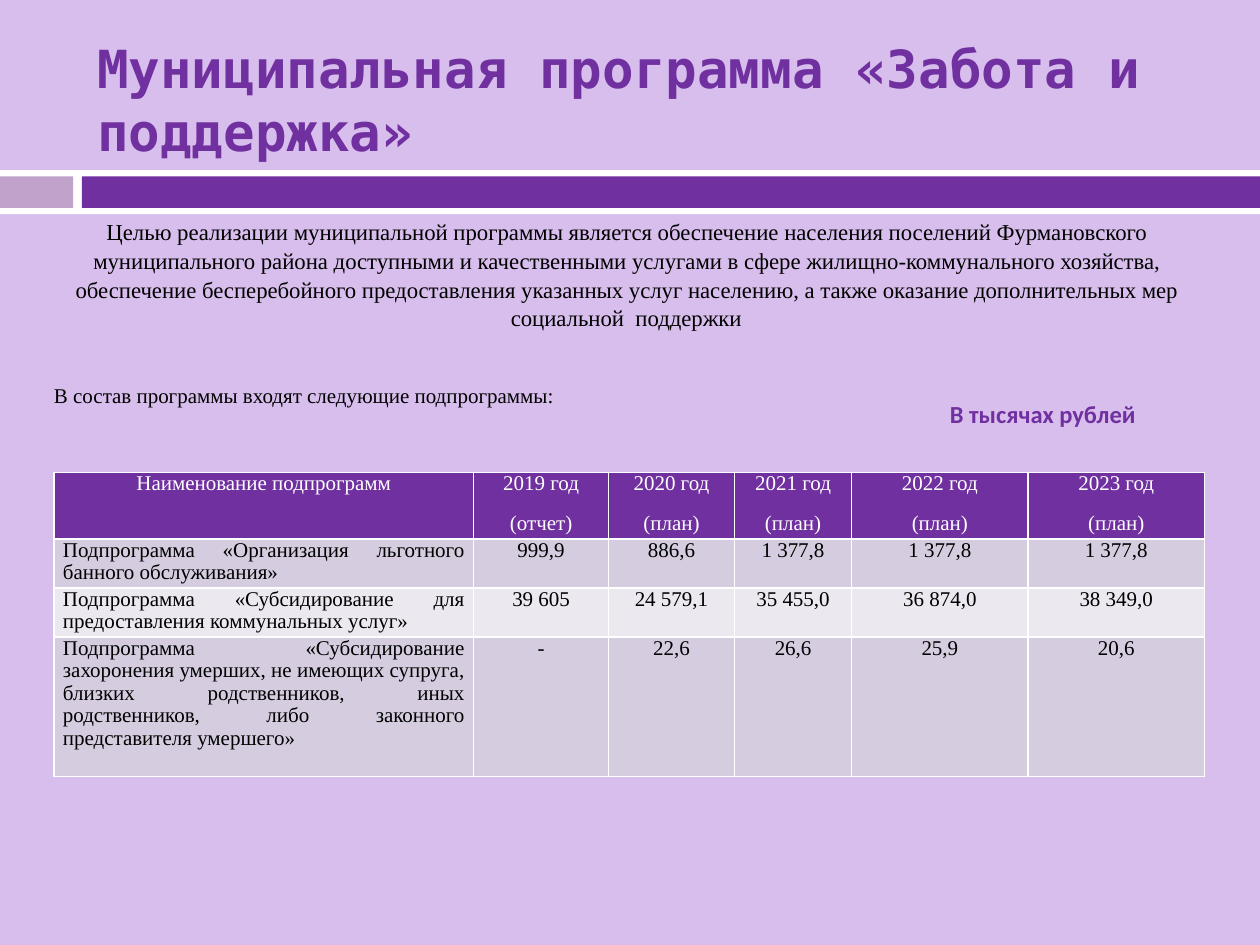
from dataclasses import dataclass

import pptx
import pptx.dml.color
import pptx.enum.shapes
import pptx.enum.text
import pptx.oxml
import pptx.oxml.ns
import pptx.util
from pptx.dml.color import RGBColor
from pptx.util import Inches, Pt

PURPLE = RGBColor(0x70, 0x30, 0xA0)
LILAC = RGBColor(0xD8, 0xBE, 0xEC)
MAUVE = RGBColor(0xC0, 0xA2, 0xCA)
WHITE = RGBColor(0xFF, 0xFF, 0xFF)
BLACK = RGBColor(0x00, 0x00, 0x00)
ROW_FILLS = (RGBColor(0xD5, 0xCD, 0xDF), RGBColor(0xEB, 0xE8, 0xF0))
ALIGN = pptx.enum.text.PP_ALIGN


@dataclass(frozen=True)
class Band:
    left: float
    top: float
    width: float
    height: float
    fill: RGBColor


@dataclass(frozen=True)
class Style:
    font: str
    size: float
    color: RGBColor
    bold: bool = False
    align: ALIGN = ALIGN.LEFT
    before: float = 0
    after: float = 0
    spacing: float = 1


BANDS = (
    Band(0, 1.35, 10, 0.35, WHITE),
    Band(0, 1.4, 0.58, 0.25, MAUVE),
    Band(0.65, 1.4, 9.35, 0.25, PURPLE),
)
SERIF = "Times New Roman"
TITLE = Style("DejaVu Sans Mono", 30, PURPLE, True)
GOAL = Style(SERIF, 13, BLACK, align=ALIGN.CENTER, before=7, spacing=1.05)
INTRO = Style(SERIF, 12, BLACK, before=29)
UNITS = Style("Calibri", 14, PURPLE, True)
HEADER = Style(SERIF, 12, WHITE, align=ALIGN.CENTER, after=10, spacing=0.97)
NAME = Style(SERIF, 12, BLACK, align=ALIGN.JUSTIFY, spacing=0.97)
VALUE = Style(SERIF, 12, BLACK, align=ALIGN.CENTER, spacing=0.97)

COLUMN_WIDTHS = (3.33, 1.07, 1, 0.93, 1.4, 1.4)
ROW_HEIGHTS = (0.51, 0.37, 0.37, 1.11)
HEADINGS = (
    "Наименование подпрограмм",
    "2019 год\n(отчет)",
    "2020 год\n(план)",
    "2021 год\n(план)",
    "2022 год\n(план)",
    "2023 год\n(план)",
)
SUBPROGRAMS = (
    ("Подпрограмма «Организация льготного банного обслуживания»",
     "999,9", "886,6", "1 377,8", "1 377,8", "1 377,8"),
    ("Подпрограмма «Субсидирование для предоставления коммунальных услуг»",
     "39 605", "24 579,1", "35 455,0", "36 874,0", "38 349,0"),
    ("Подпрограмма «Субсидирование захоронения умерших, не имеющих супруга, "
     "близких родственников, иных родственников, либо законного представителя умершего»",
     "-", "22,6", "26,6", "25,9", "20,6"),
)
GOAL_TEXT = (
    "Целью реализации муниципальной программы является обеспечение населения "
    "поселений Фурмановского муниципального района доступными и качественными "
    "услугами в сфере жилищно-коммунального хозяйства, обеспечение бесперебойного "
    "предоставления указанных услуг населению, а также оказание дополнительных мер "
    "социальной  поддержки"
)
INTRO_TEXT = "В состав программы входят следующие подпрограммы:"


def format_paragraph(paragraph, style: Style) -> None:
    paragraph.alignment = style.align
    paragraph.space_before = Pt(style.before)
    paragraph.space_after = Pt(style.after)
    paragraph.line_spacing = style.spacing
    for run in paragraph.runs:
        run.font.name = style.font
        run.font.size = Pt(style.size)
        run.font.bold = style.bold
        run.font.color.rgb = style.color


def write_text(text_frame, text: str, *styles: Style) -> None:
    text_frame.text = text
    text_frame.word_wrap = True
    for index, paragraph in enumerate(text_frame.paragraphs):
        format_paragraph(paragraph, styles[min(index, len(styles) - 1)])


def add_band(slide, band: Band) -> None:
    shape = slide.shapes.add_shape(
        pptx.enum.shapes.MSO_SHAPE.RECTANGLE,
        Inches(band.left), Inches(band.top), Inches(band.width), Inches(band.height),
    )
    shape.shadow.inherit = False
    shape.fill.solid()
    shape.fill.fore_color.rgb = band.fill
    shape.line.fill.background()


def add_text(slide, left: float, top: float, width: float, height: float,
             text: str, *styles: Style) -> None:
    box = slide.shapes.add_textbox(Inches(left), Inches(top), Inches(width), Inches(height))
    write_text(box.text_frame, text, *styles)


def set_borders(cell, color: RGBColor, width: float) -> None:
    properties = cell._tc.get_or_add_tcPr()
    for position, side in enumerate(("lnL", "lnR", "lnT", "lnB")):
        border = pptx.oxml.parse_xml(
            f'<a:{side} {pptx.oxml.ns.nsdecls("a")} w="{Pt(width)}"><a:solidFill>'
            f'<a:srgbClr val="{color}"/></a:solidFill></a:{side}>'
        )
        properties.insert(position, border)


def fill_cell(cell, text: str, style: Style, fill: RGBColor) -> None:
    cell.margin_left = cell.margin_right = Inches(0.07)
    cell.margin_top = cell.margin_bottom = 0
    cell.fill.solid()
    cell.fill.fore_color.rgb = fill
    write_text(cell.text_frame, text, style)
    set_borders(cell, WHITE, 1)


def add_subprogram_table(slide) -> None:
    table = slide.shapes.add_table(
        len(ROW_HEIGHTS), len(COLUMN_WIDTHS), Inches(0.43), Inches(3.75),
        Inches(sum(COLUMN_WIDTHS)), Inches(sum(ROW_HEIGHTS)),
    ).table
    for column, width in zip(table.columns, COLUMN_WIDTHS):
        column.width = Inches(width)
    for row, height in zip(table.rows, ROW_HEIGHTS):
        row.height = Inches(height)
    for column, heading in enumerate(HEADINGS):
        fill_cell(table.cell(0, column), heading, HEADER, PURPLE)
    for row, texts in enumerate(SUBPROGRAMS):
        for column, text in enumerate(texts):
            style = VALUE if column else NAME
            fill_cell(table.cell(row + 1, column), text, style, ROW_FILLS[row % 2])


def main() -> None:
    presentation = pptx.Presentation()
    presentation.slide_width = Inches(10)
    presentation.slide_height = Inches(7.5)
    slide = presentation.slides.add_slide(presentation.slide_layouts[5])
    slide.background.fill.solid()
    slide.background.fill.fore_color.rgb = LILAC

    for band in BANDS:
        add_band(slide, band)

    title = slide.shapes.title
    title.left, title.top = Inches(0.67), Inches(0.25)
    title.width, title.height = Inches(8.92), Inches(1.08)
    title.text_frame.vertical_anchor = pptx.enum.text.MSO_ANCHOR.MIDDLE
    write_text(title.text_frame, "Муниципальная программа «Забота и поддержка»", TITLE)

    add_text(slide, 0.33, 1.67, 9.28, 1.69, f"{GOAL_TEXT}\n{INTRO_TEXT}", GOAL, INTRO)
    add_text(slide, 7.44, 3.12, 2.27, 0.47, "В тысячах рублей", UNITS)
    add_subprogram_table(slide)
    presentation.save("out.pptx")


if __name__ == "__main__":
    main()
